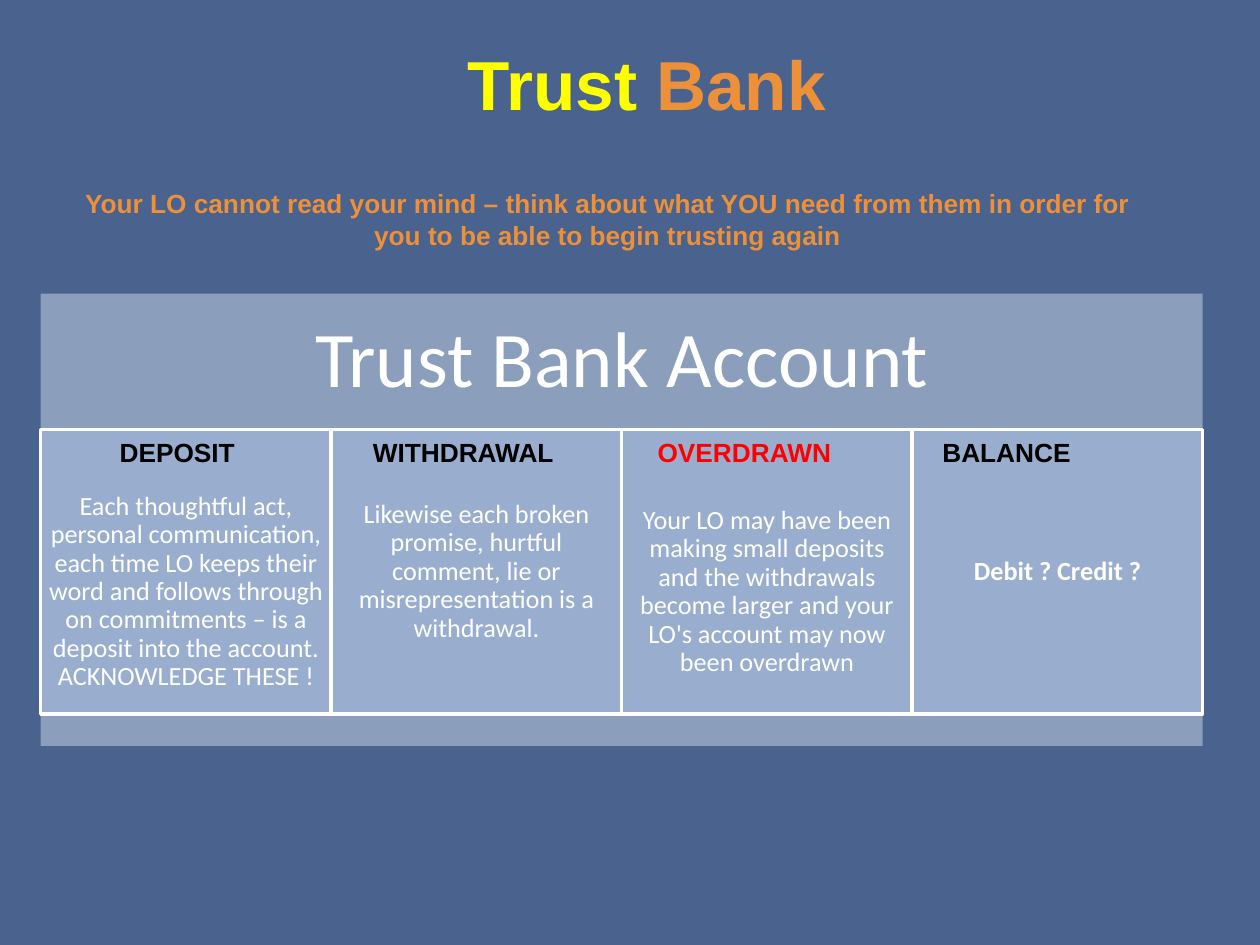
from pptx import Presentation
from pptx.dml.color import RGBColor
from pptx.enum.shapes import MSO_SHAPE
from pptx.enum.text import MSO_ANCHOR, PP_ALIGN
from pptx.util import Pt

RECTANGLE = MSO_SHAPE.RECTANGLE
MIDDLE, TOP = MSO_ANCHOR.MIDDLE, MSO_ANCHOR.TOP
CENTER, LEFT = PP_ALIGN.CENTER, PP_ALIGN.LEFT
COLORS = {
    name: RGBColor.from_string(code)
    for name, code in {
        "background": "49628E", "band": "8B9EBC", "column": "99AECF",
        "white": "FFFFFF", "black": "000000", "red": "FF0000",
        "yellow": "FFFF00", "orange": "EC9039",
    }.items()
}


def write(shape, runs, size, font, align, anchor, insets, spacing=1.0):
    """Fill a shape with one paragraph; runs are (text, color, bold)."""
    frame = shape.text_frame
    frame.word_wrap = True
    frame.vertical_anchor = anchor
    sides = ("left", "top", "right", "bottom")
    for side, inset in zip(sides, insets):
        setattr(frame, f"margin_{side}", Pt(inset))
    paragraph = frame.paragraphs[0]
    paragraph.alignment = align
    paragraph.line_spacing = spacing
    for text, color, bold in runs:
        run = paragraph.add_run()
        run.text = text
        run.font.color.rgb = COLORS[color]
        formats = {"size": Pt(size), "name": font, "bold": bold}
        for attribute, value in formats.items():
            setattr(run.font, attribute, value)


def add_panel(left, top, width, height, fill, outlined=False):
    panel = slide.shapes.add_shape(
        RECTANGLE, Pt(left), Pt(top), Pt(width), Pt(height))
    panel.shadow.inherit = False
    panel.fill.solid()
    panel.fill.fore_color.rgb = COLORS[fill]
    if outlined:
        panel.line.color.rgb = COLORS["white"]
        panel.line.width = Pt(2)
    else:
        panel.line.fill.background()
    return panel


prs = Presentation()
prs.slide_width, prs.slide_height = Pt(720), Pt(540)
slide = prs.slides.add_slide(prs.slide_layouts[5])
slide.background.fill.solid()
slide.background.fill.fore_color.rgb = COLORS["background"]

# Title
title = slide.shapes.title
title.left, title.top, title.width, title.height = (
    Pt(51.8), Pt(18.7), Pt(635.8), Pt(57.6))
write(title, [("Trust", "yellow", True), (" Bank", "orange", True)],
      39.6, "Arial", CENTER, MIDDLE, (7.2, 3.6, 7.2, 3.6))

# Account header and footer bands
account_left, account_width = 23.3, 664
columns_top, columns_height = 245.5, 162.6
header = add_panel(account_left, 167.8, account_width, 77.7, "band")
write(header, [("Trust Bank Account", "white", False)],
      45, "Calibri", CENTER, MIDDLE, (13.7,) * 4, 0.9)
add_panel(account_left, columns_top + columns_height, account_width, 18.1, "band")

# Columns: heading, heading color, heading left, heading width,
# body, body bold, extra space above the body
columns = [
    ("DEPOSIT", "black", 63.4, 104.4,
     "Each thoughtful act, personal communication, each time LO keeps their "
     "word and follows through on commitments – is a deposit into the account. "
     "ACKNOWLEDGE THESE !", False, 23),
    ("WITHDRAWAL", "black", 208.1, 141.1,
     "Likewise each broken promise, hurtful comment, lie or misrepresentation "
     "is a withdrawal.", False, 0),
    ("OVERDRAWN", "red", 370.8, 148.3,
     "Your LO may have been making small deposits and the withdrawals become "
     "larger and your LO's account may now been overdrawn", False, 23),
    ("BALANCE", "black", 533.5, 93.6, "Debit ? Credit ?", True, 0),
]
column_width = account_width / len(columns)
label_insets = (5, 2.9, 5, 2.9)
for index, (heading, color, left, width, body, bold, drop) in enumerate(columns):
    column = add_panel(account_left + index * column_width, columns_top,
                       column_width, columns_height, "column", True)
    write(column, [(body, "white", bold)], 15, "Calibri", CENTER, MIDDLE,
          (4.3, 4.3 + drop, 4.3, 4.3), 0.9)
    label = slide.shapes.add_textbox(Pt(left), Pt(246.2), Pt(width), Pt(23.8))
    write(label, [(heading, color, True)], 15, "Arial", LEFT, TOP, label_insets)

# Advice under the title
advice = slide.shapes.add_textbox(Pt(31), Pt(104.4), Pt(632.2), Pt(41.8))
write(advice, [("Your LO cannot read your mind – think about what YOU need from "
                "them in order for you to be able to begin trusting again",
                "orange", True)], 15, "Arial", CENTER, TOP, label_insets)

prs.save("out.pptx")
